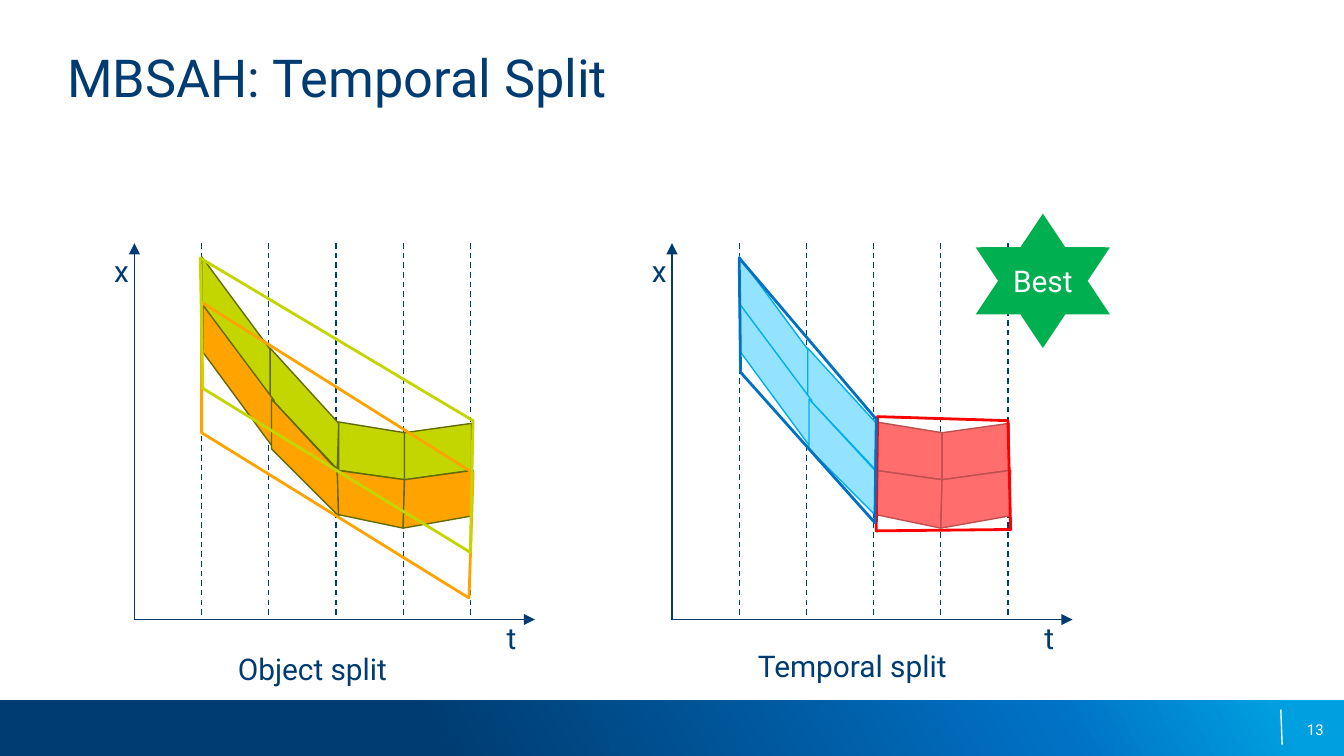
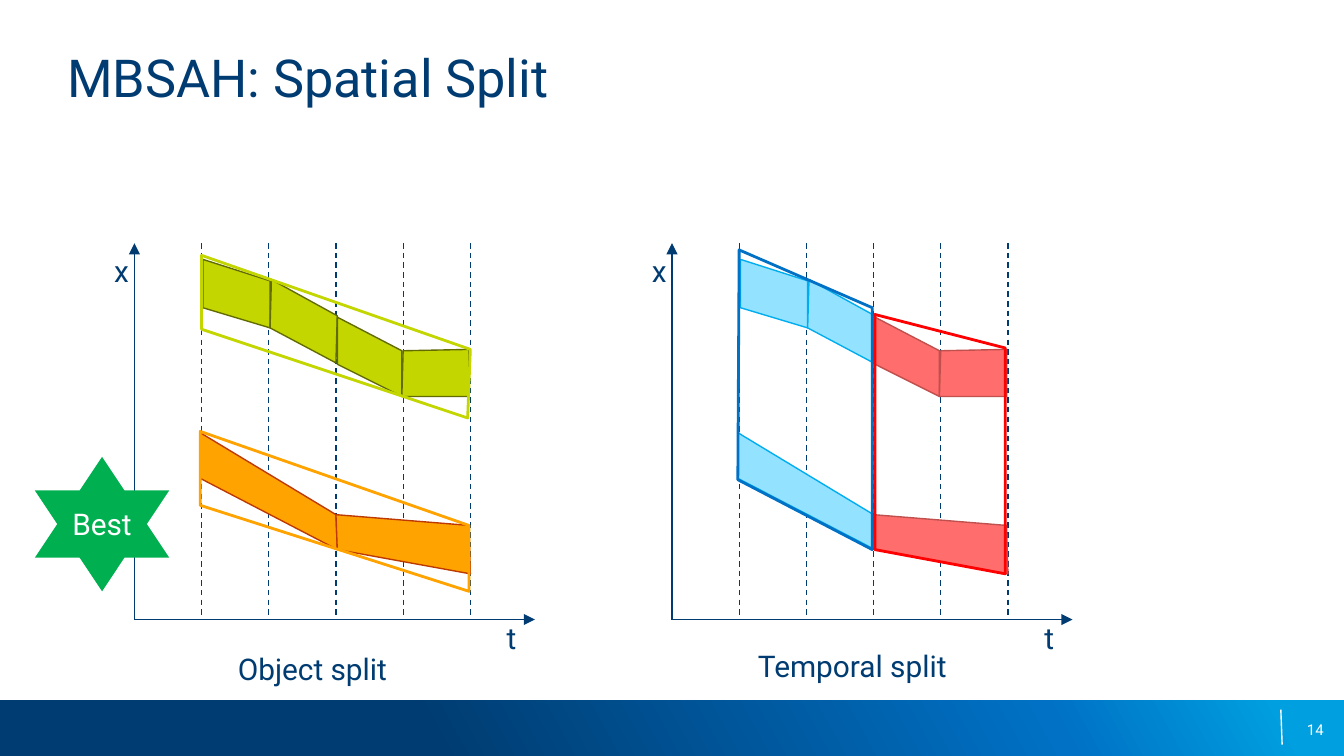
from copy import deepcopy
from dataclasses import dataclass
from typing import NamedTuple

from pptx import Presentation
from pptx.dml.color import RGBColor
from pptx.enum.dml import MSO_LINE
from pptx.enum.shapes import MSO_CONNECTOR, MSO_SHAPE
from pptx.enum.text import MSO_ANCHOR, MSO_AUTO_SIZE, PP_ALIGN
from pptx.oxml.ns import qn
from pptx.oxml.xmlchemy import OxmlElement
from pptx.util import Inches, Pt

STRAIGHT = MSO_CONNECTOR.STRAIGHT
RECTANGLE = MSO_SHAPE.RECTANGLE
STAR = MSO_SHAPE.STAR_6_POINT
DASH = MSO_LINE.DASH
TOP, MIDDLE = MSO_ANCHOR.TOP, MSO_ANCHOR.MIDDLE
LEFT, CENTER, RIGHT = PP_ALIGN.LEFT, PP_ALIGN.CENTER, PP_ALIGN.RIGHT
NO_FIT = MSO_AUTO_SIZE.NONE
GROW = MSO_AUTO_SIZE.SHAPE_TO_FIT_TEXT
TITLE_ONLY = 5


@dataclass(frozen=True)
class Theme:
    font: str = "Roboto"
    title_size: float = 28
    label_size: float = 16
    number_size: float = 8
    thin: float = 0.75
    thick: float = 1.5
    navy: str = "003C71"
    blue: str = "0071C5"
    cyan: str = "009FDF"
    white: str = "FFFFFF"
    best: str = "00B050"
    lime: str = "C3D600"
    olive: str = "626B00"
    orange: str = "FFA300"
    rust: str = "BD3901"
    sky: str = "93E2FF"
    sky_edge: str = "00AEEF"
    rose: str = "FF6D6D"
    rose_edge: str = "C0504D"
    red: str = "FF0000"


THEME = Theme()
AXIS_TOP, AXIS_BOTTOM, AXIS_LENGTH = 1.81, 4.61, 2.98
OBJECT_X, TEMPORAL_X = 1, 5
TICK_STEP, TICK_COUNT = 0.5, 5


class Quad(NamedTuple):
    top_left: tuple[float, float]
    bottom_left: tuple[float, float]
    bottom_right: tuple[float, float]
    top_right: tuple[float, float]


class Bound(NamedTuple):
    color: str
    quad: Quad


class Track(NamedTuple):
    fill: str
    edge: str
    segments: list[Quad]


@dataclass(frozen=True)
class SplitScene:
    title: str
    number: int
    tracks: list[Track]
    object_bounds: list[Bound]
    temporal_bounds: list[Bound]
    best_at: tuple[float, float]


SCENES = [
    SplitScene(
        "MBSAH: Temporal Split", 13,
        [
            Track(THEME.lime, THEME.olive, [
                Quad((0.5, 1.91), (0.5, 2.26), (1.02, 2.98), (1.01, 2.6)),
                Quad((1.01, 2.59), (1.01, 2.96), (1.51, 3.49), (1.52, 3.15)),
                Quad((1.52, 3.14), (1.52, 3.5), (2.01, 3.57), (2.01, 3.22)),
                Quad((2.01, 3.22), (2.01, 3.57), (2.51, 3.5), (2.51, 3.15)),
            ]),
            Track(THEME.orange, THEME.olive, [
                Quad((0.51, 2.27), (0.51, 2.62), (1.04, 3.34), (1.04, 2.98)),
                Quad((1.02, 2.97), (1.02, 3.34), (1.52, 3.84), (1.51, 3.5)),
                Quad((1.51, 3.5), (1.52, 3.83), (2, 3.93), (2.01, 3.57)),
                Quad((2.01, 3.57), (2, 3.93), (2.51, 3.84), (2.52, 3.5)),
            ]),
        ],
        [
            Bound(THEME.orange, Quad((0.5, 2.25), (0.5, 3.22), (2.49, 4.45), (2.52, 3.52))),
            Bound(THEME.lime, Quad((0.49, 1.92), (0.51, 2.89), (2.5, 4.11), (2.52, 3.13))),
        ],
        [
            Bound(THEME.red, Quad((1.53, 3.1), (1.52, 3.95), (2.52, 3.94), (2.5, 3.13))),
            Bound(THEME.blue, Quad((0.5, 1.92), (0.51, 2.77), (1.51, 3.89), (1.52, 3.12))),
        ],
        (7.26, 1.59),
    ),
    SplitScene(
        "MBSAH: Spatial Split", 14,
        [
            Track(THEME.orange, THEME.rust, [
                Quad((0.49, 3.22), (0.49, 3.56), (1.51, 4.09), (1.5, 3.83)),
                Quad((1.5, 3.83), (1.51, 4.09), (2.5, 4.27), (2.49, 3.91)),
            ]),
            Track(THEME.lime, THEME.olive, [
                Quad((0.51, 1.93), (0.51, 2.29), (1.01, 2.44), (1.01, 2.09)),
                Quad((1.02, 2.08), (1.01, 2.44), (1.5, 2.7), (1.51, 2.35)),
                Quad((1.51, 2.36), (1.51, 2.71), (1.99, 2.95), (1.99, 2.61)),
                Quad((2, 2.61), (1.99, 2.95), (2.49, 2.95), (2.49, 2.6)),
            ]),
        ],
        [
            Bound(THEME.lime, Quad((0.5, 1.9), (0.5, 2.45), (2.48, 3.11), (2.5, 2.6))),
            Bound(THEME.orange, Quad((0.49, 3.21), (0.49, 3.76), (2.49, 4.4), (2.49, 3.91))),
        ],
        [
            Bound(THEME.blue, Quad((0.5, 1.86), (0.49, 3.57), (1.49, 4.09), (1.49, 2.29))),
            Bound(THEME.red, Quad((1.51, 2.34), (1.51, 4.09), (2.48, 4.27), (2.48, 2.59))),
        ],
        (0.26, 3.4),
    ),
]


def rgb(color: str) -> RGBColor:
    return RGBColor.from_string(color)


def place(shape, left: float, top: float, width: float, height: float) -> None:
    shape.left, shape.top = Inches(left), Inches(top)
    shape.width, shape.height = Inches(width), Inches(height)


def write(shape, text: str, size: float, color: str, align=LEFT, anchor=TOP,
          wrap: bool = True, fit=NO_FIT) -> None:
    frame = shape.text_frame
    frame.margin_left = frame.margin_right = frame.margin_top = frame.margin_bottom = 0
    frame.word_wrap, frame.auto_size, frame.vertical_anchor = wrap, fit, anchor
    para = frame.paragraphs[0]
    para.text, para.alignment = text, align
    para.font.name, para.font.size = THEME.font, Pt(size)
    para.font.color.rgb = rgb(color)


def add_label(page, text: str, left: float, top: float, width: float) -> None:
    box = page.shapes.add_textbox(Inches(left), Inches(top), Inches(width), Inches(0.27))
    write(box, text, THEME.label_size, THEME.navy, wrap=False, fit=GROW)


def add_line(page, start: tuple[float, float], end: tuple[float, float],
             color: str, dashed: bool = False, arrow: bool = False):
    line = page.shapes.add_connector(
        STRAIGHT, *(Inches(value) for value in (*start, *end)))
    line.line.color.rgb = rgb(color)
    line.line.width = Pt(THEME.thin)
    if dashed:
        line.line.dash_style = DASH
    if arrow:
        tail = OxmlElement("a:tailEnd")
        tail.set("type", "triangle")
        line.line._get_or_add_ln().append(tail)
    line.element.spPr.append(OxmlElement("a:effectLst"))
    return line


def add_quad(page, origin: float, quad: Quad, edge: str, width: float,
             fill: str | None = None):
    points = [(Inches(origin + x), Inches(y)) for x, y in quad]
    builder = page.shapes.build_freeform(*points[0])
    builder.add_line_segments(points[1:], close=True)
    shape = builder.convert_to_shape()
    shape.shadow.inherit = False
    shape.line.color.rgb, shape.line.width = rgb(edge), Pt(width)
    if fill:
        shape.fill.solid()
        shape.fill.fore_color.rgb = rgb(fill)
    else:
        shape.fill.background()
    return shape


def add_track(page, origin: float, track: Track) -> None:
    page.shapes.add_group_shape([
        add_quad(page, origin, quad, track.edge, THEME.thin, track.fill)
        for quad in track.segments])


def split_by_time(tracks: list[Track]) -> list[Track]:
    before, after = [], []
    for track in tracks:
        middle = len(track.segments) // 2
        before += track.segments[:middle]
        after += track.segments[middle:]
    return [Track(THEME.sky, THEME.sky_edge, before),
            Track(THEME.rose, THEME.rose_edge, after)]


def add_ticks(page, origin: float) -> None:
    for index in range(1, TICK_COUNT + 1):
        x = origin + index * TICK_STEP
        add_line(page, (x, AXIS_TOP), (x, AXIS_BOTTOM), THEME.navy, dashed=True)


def add_plot(page, origin: float, tracks: list[Track], bounds: list[Bound]) -> None:
    corner = (origin, AXIS_BOTTOM)
    for end in ((origin, AXIS_TOP), (origin + AXIS_LENGTH, AXIS_BOTTOM)):
        add_line(page, corner, end, THEME.navy, arrow=True)
    for track in tracks:
        add_track(page, origin, track)
    for bound in bounds:
        add_quad(page, origin, bound.quad, bound.color, THEME.thick)
    add_label(page, "t", origin + 2.77, AXIS_BOTTOM, 0.08)
    add_label(page, "x", origin - 0.15, 1.88, 0.11)


def add_best(page, left: float, top: float) -> None:
    star = page.shapes.add_shape(STAR, Inches(left), Inches(top), Inches(1), Inches(1))
    star.shadow.inherit = False
    star.fill.solid()
    star.fill.fore_color.rgb = rgb(THEME.best)
    star.line.fill.background()
    write(star, "Best", THEME.label_size, THEME.white, CENTER, MIDDLE, wrap=False)


def add_footer_band(page, layout) -> None:
    band = page.shapes.add_shape(RECTANGLE, 0, Inches(5.21), Inches(10), Inches(0.42))
    band.shadow.inherit = False
    band.line.fill.background()
    band.fill.gradient()
    band.fill.gradient_angle = 29
    stops = band.element.spPr.find(".//" + qn("a:gsLst"))
    stops.append(deepcopy(stops[-1]))
    colors = ((0.32, THEME.navy), (0.78, THEME.blue), (0.95, THEME.cyan))
    for stop, (position, color) in zip(band.fill.gradient_stops, colors):
        stop.position, stop.color.rgb = position, rgb(color)
    divider = add_line(page, (9.53, 5.28), (9.54, 5.54), THEME.white)
    for shape in (band, divider):
        layout.shapes.element.append(shape.element)


def fill_page(page, scene: SplitScene) -> None:
    for origin in (TEMPORAL_X, OBJECT_X):
        add_ticks(page, origin)
    number = page.shapes.add_textbox(Inches(7.52), Inches(5.28), Inches(2.33), Inches(0.3))
    write(number, str(scene.number), THEME.number_size, THEME.white, RIGHT, MIDDLE)
    title = page.shapes.title
    place(title, 0.5, 0.34, 9, 0.95)
    write(title, scene.title, THEME.title_size, THEME.navy)
    add_plot(page, OBJECT_X, scene.tracks, scene.object_bounds)
    add_plot(page, TEMPORAL_X, split_by_time(scene.tracks), scene.temporal_bounds)
    add_label(page, "Object split", 1.77, 4.84, 1.13)
    add_label(page, "Temporal split", 5.64, 4.82, 1.44)
    add_best(page, *scene.best_at)


def main() -> None:
    deck = Presentation()
    deck.slide_width = Inches(10)
    deck.slide_height = deck.slide_width * 9 // 16
    layout = deck.slide_layouts[TITLE_ONLY]
    pages = [deck.slides.add_slide(layout) for _ in SCENES]
    add_footer_band(pages[0], layout)
    for page, scene in zip(pages, SCENES):
        fill_page(page, scene)
    deck.save("out.pptx")


if __name__ == "__main__":
    main()
